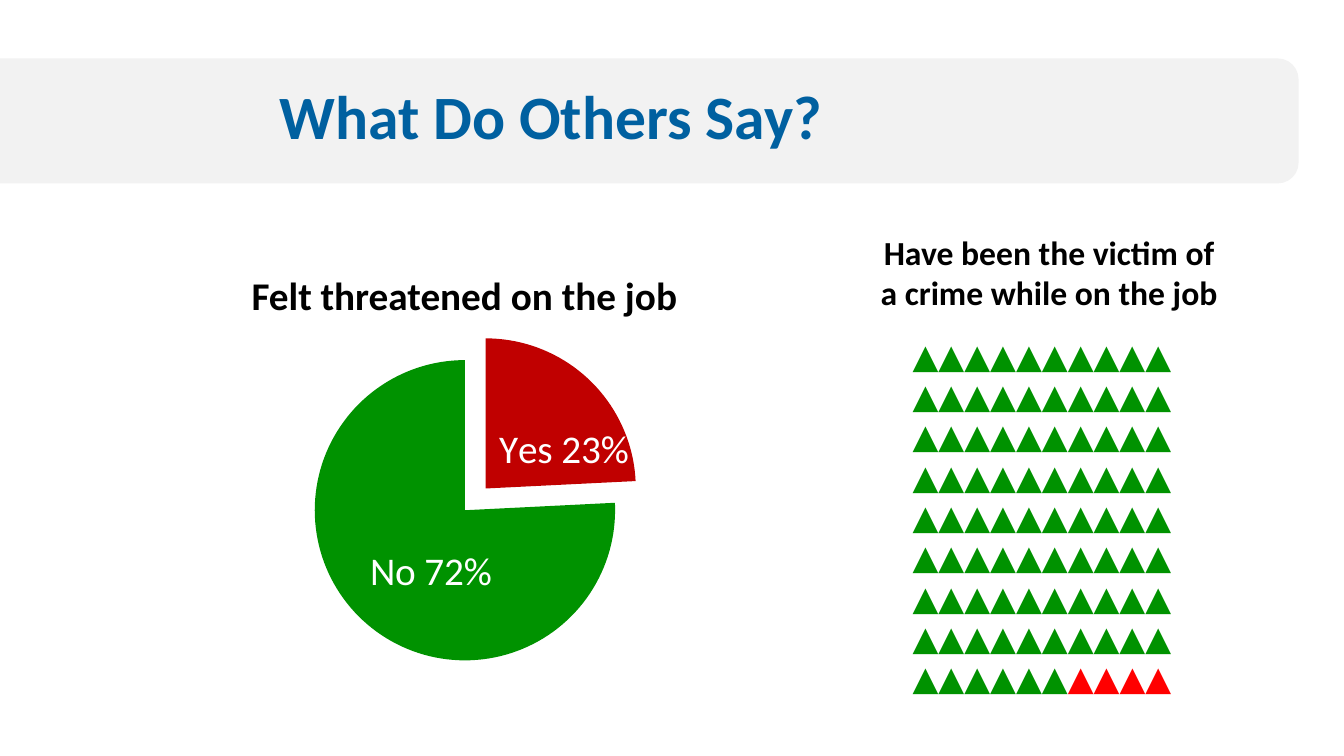
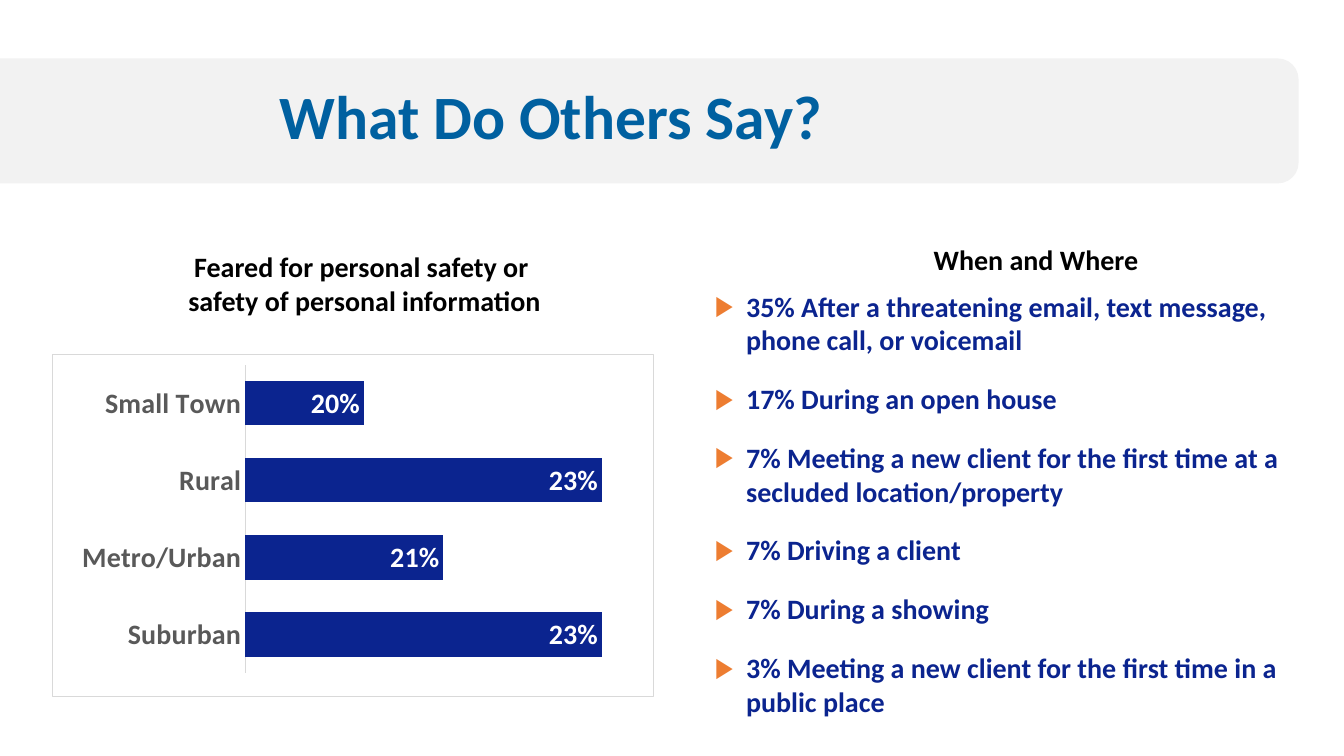
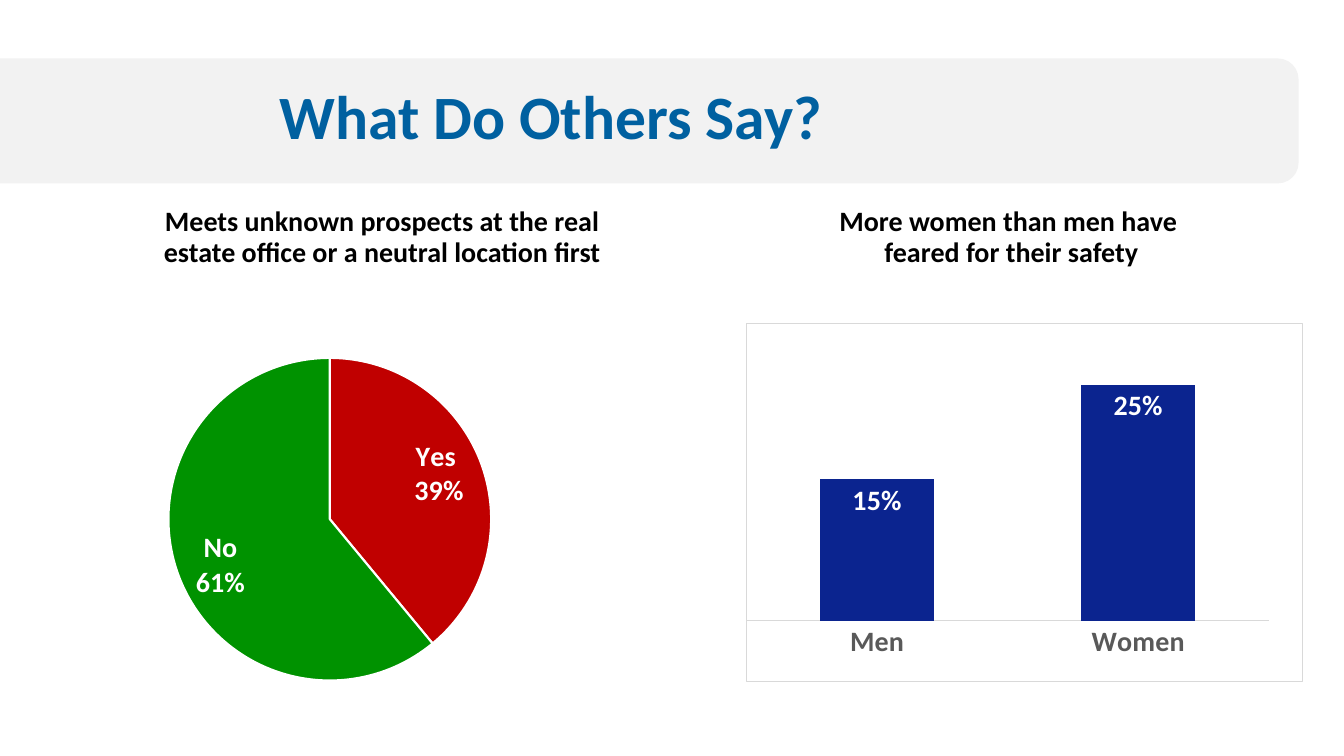
from dataclasses import dataclass

from lxml import etree
from pptx import Presentation
from pptx import util as u
from pptx.chart import data as chart_data
from pptx.dml import color
from pptx.enum import chart as charts
from pptx.enum import shapes, text
from pptx.oxml import parse_xml
from pptx.oxml import ns


@dataclass(frozen=True)
class Theme:
    face: str = "Calibri"
    title: str = "0060A0"
    band: str = "F2F2F2"
    black: str = "000000"
    white: str = "FFFFFF"
    navy: str = "0B248F"
    orange: str = "ED7D31"
    green: str = "009200"
    dark_red: str = "C00000"
    red: str = "FF0000"
    axis_text: str = "595959"
    rule: str = "D9D9D9"
    title_size: int = 44
    large: int = 28
    medium: int = 24
    small: int = 20
    chart_size: int = 10


THEME = Theme()
TITLE = "What Do Others Say?"
TITLE_BOX = (2.67, 0.58, 10.21, 1.22)
BAND_BOX = (-0.32, 0.58, 13.2, 1.24)
WHEN_AND_WHERE = [
    "35% After a threatening email, text message, phone call, or voicemail",
    "17% During an open house",
    "7% Meeting a new client for the first time at a secluded location/property",
    "7% Driving a client",
    "7% During a showing",
    "3% Meeting a new client for the first time in a public place",
]


def rgb(value):
    return color.RGBColor.from_string(value)


def inches(box):
    return [u.Inches(length) for length in box]


def place(shape, box):
    shape.left, shape.top, shape.width, shape.height = inches(box)


def set_font(font, size, ink, bold=True):
    font.name = THEME.face
    font.size = u.Pt(size)
    font.bold = bold
    font.color.rgb = rgb(ink)


def set_bullet(para, indent=0, sign=None, ink=None):
    """Indent a paragraph, with a hanging bullet if a sign is given."""
    props = para._p.get_or_add_pPr()
    props.set("marL", str(u.Inches(indent)))
    props.set("indent", str(-u.Inches(indent) if sign else 0))
    if sign:
        fill = etree.SubElement(props, ns.qn("a:buClr"))
        etree.SubElement(fill, ns.qn("a:srgbClr"), val=ink)
        etree.SubElement(props, ns.qn("a:buFont"), typeface="Arial")
        etree.SubElement(props, ns.qn("a:buChar"), char=sign)
    else:
        etree.SubElement(props, ns.qn("a:buNone"))


def add_band(deck, page):
    """Draw the title band and move it to the back of the slide master."""
    band = page.shapes.add_shape(shapes.MSO_SHAPE.ROUNDED_RECTANGLE, *inches(BAND_BOX))
    band.shadow.inherit = False
    band.fill.solid()
    band.fill.fore_color.rgb = rgb(THEME.band)
    band.line.fill.background()
    deck.slide_master.shapes.element.insert(2, band.element)


def add_page(deck, layout):
    page = deck.slides.add_slide(deck.slide_layouts.get_by_name(layout))
    title = page.shapes.title
    place(title, TITLE_BOX)
    frame = title.text_frame
    frame.auto_size = text.MSO_AUTO_SIZE.NONE
    frame.vertical_anchor = text.MSO_ANCHOR.MIDDLE
    para = frame.paragraphs[0]
    para.text = TITLE
    para.alignment = text.PP_ALIGN.LEFT
    para.line_spacing = 0.9
    set_font(para.font, THEME.title_size, THEME.title)
    return page


def add_text_frame(page, box):
    frame = page.shapes.add_textbox(*inches(box)).text_frame
    frame.word_wrap = True
    return frame


def fill_heading(para, words, size):
    para.text = words
    para.alignment = text.PP_ALIGN.CENTER
    set_font(para.font, size, THEME.black)


def add_heading(page, box, words, size):
    fill_heading(add_text_frame(page, box).paragraphs[0], words, size)


def fill_body_heading(body, box, words):
    place(body, box)
    body.text_frame.auto_size = text.MSO_AUTO_SIZE.NONE
    para = body.text_frame.paragraphs[0]
    set_bullet(para)
    para.line_spacing = 0.9
    para.space_before = u.Pt(10)
    fill_heading(para, words, THEME.small)


def fill_list(body, box, items):
    place(body, box)
    frame = body.text_frame
    frame.auto_size = text.MSO_AUTO_SIZE.NONE
    for index, item in enumerate(items):
        para = frame.add_paragraph() if index else frame.paragraphs[0]
        para.text = item
        set_bullet(para, 0.31, "▶", THEME.orange)
        para.space_before = u.Pt(6)
        para.space_after = u.Pt(12)
        set_font(para.font, THEME.small, THEME.navy)


def add_pictogram(page, box, rows, columns, marked):
    """Fill a grid with triangles, the last few of them marked red."""
    frame = add_text_frame(page, box)
    for row in range(rows):
        para = frame.paragraphs[0] if row == 0 else frame.add_paragraph()
        set_bullet(para, 1)
        para.alignment = text.PP_ALIGN.CENTER
        set_font(para.font, THEME.medium, THEME.green)
        red = marked if row == rows - 1 else 0
        para.add_run().text = "▲" * (columns - red)
        if red:
            span = para.add_run()
            span.text = "▲" * red
            span.font.color.rgb = rgb(THEME.red)


def manual_layout(values):
    """Build a chart layout from a dict such as {"x": 0.1, "y": 0.2}."""
    parts = "".join(f'<c:{key} val="{value}"/>' for key, value in values.items())
    return parse_xml(
        f'<c:layout {ns.nsdecls("c")}>'
        f"<c:manualLayout>{parts}</c:manualLayout></c:layout>"
    )


def set_plot_box(chart, plot_box):
    area = chart.element.find(".//" + ns.qn("c:plotArea"))
    for old in area.findall(ns.qn("c:layout")):
        area.remove(old)
    values = {"layoutTarget": "inner", "xMode": "edge", "yMode": "edge"}
    values.update(zip("xywh", plot_box))
    area.insert(0, manual_layout(values))


def add_chart(page, box, kind, values, plot_box):
    data = chart_data.CategoryChartData(number_format="0%")
    data.categories = list(values)
    data.add_series("Series 1", list(values.values()))
    chart = page.shapes.add_chart(kind, *inches(box), data).chart
    chart.has_legend = False
    chart.has_title = False
    set_font(chart.font, THEME.chart_size, THEME.black, bold=False)
    set_plot_box(chart, plot_box)
    return chart


def add_frame_line(chart):
    chart.element.find(ns.qn("c:chart")).addnext(parse_xml(
        f'<c:spPr {ns.nsdecls("c", "a")}><a:noFill/><a:ln w="{u.Pt(0.75)}">'
        f'<a:solidFill><a:srgbClr val="{THEME.rule}"/></a:solidFill></a:ln></c:spPr>'
    ))


def format_labels(labels, size, bold=True):
    labels.show_value = True
    labels.number_format = "0%"
    labels.number_format_is_linked = False
    set_font(labels.font, size, THEME.white, bold)


def add_bar_chart(page, box, kind, values, plot_box, scale, gap, overlap):
    chart = add_chart(page, box, kind, values, plot_box)
    add_frame_line(chart)
    plot = chart.plots[0]
    plot.vary_by_categories = False
    plot.gap_width = gap
    plot.overlap = overlap
    bars = plot.series[0].format.fill
    bars.solid()
    bars.fore_color.rgb = rgb(THEME.navy)

    plot.has_data_labels = True
    format_labels(plot.data_labels, THEME.small)
    plot.data_labels.position = charts.XL_LABEL_POSITION.INSIDE_END

    names = chart.category_axis
    names.major_tick_mark = charts.XL_TICK_MARK.NONE
    names.format.line.color.rgb = rgb(THEME.rule)
    names.format.line.width = u.Pt(0.75)
    set_font(names.tick_labels.font, THEME.small, THEME.axis_text)

    amounts = chart.value_axis
    amounts.minimum_scale, amounts.maximum_scale = scale
    amounts.visible = False
    amounts.has_major_gridlines = True
    amounts.major_gridlines.format.line.color.rgb = rgb(THEME.white)
    amounts.major_gridlines.format.line.width = u.Pt(0.75)


def adjust_label(label, shift, wrap):
    """Shift a pie label from its slice's centre; keep it on one line if asked."""
    label.find(ns.qn("c:idx")).addnext(manual_layout(dict(zip("xy", shift))))
    if not wrap:
        label.find(ns.qn("c:dLblPos")).addprevious(parse_xml(
            f'<c:txPr {ns.nsdecls("c", "a")}><a:bodyPr wrap="none"/>'
            "<a:p><a:pPr><a:defRPr/></a:pPr></a:p></c:txPr>"
        ))


def add_pie(page, box, values, plot_box, labels, size, bold, explosion=0):
    """Draw a yes/no pie; labels holds (words, shift, wrap) for each slice."""
    chart = add_chart(page, box, charts.XL_CHART_TYPE.PIE, values, plot_box)
    chart.plots[0].vary_by_categories = True
    series = chart.plots[0].series[0]
    format_labels(series.data_labels, size, bold)
    for index, (ink, (words, _, wrap)) in enumerate(
            zip((THEME.dark_red, THEME.green), labels)):
        point = series.points[index]
        point.format.fill.solid()
        point.format.fill.fore_color.rgb = rgb(ink)
        if explosion:
            point.format.line.fill.background()
        else:
            point.format.line.color.rgb = rgb(THEME.white)
            point.format.line.width = u.Pt(1.5)
        label = point.data_label
        label.text_frame.text = words
        label.text_frame.word_wrap = wrap
        for para in label.text_frame.paragraphs:
            for span in para.runs:
                set_font(span.font, size, THEME.white, bold)
        label.position = charts.XL_LABEL_POSITION.CENTER
    for label, (_, shift, wrap) in zip(chart.element.iter(ns.qn("c:dLbl")), labels):
        adjust_label(label, shift, wrap)
    for flag in chart.element.iter(ns.qn("c:showCatName")):
        flag.set("val", "1")
    if explosion:
        first_point = next(chart.element.iter(ns.qn("c:dPt")))
        first_point.addprevious(parse_xml(
            f'<c:explosion {ns.nsdecls("c")} val="{explosion}"/>'))


def build_threat_page(deck):
    page = add_page(deck, "Title Only")
    add_band(deck, page)
    add_heading(page, (1.77, 2.64, 5.67, 0.57), "Felt threatened on the job", THEME.large)
    add_pictogram(page, (7.2, 3.27, 5.27, 3.74), rows=9, columns=10, marked=4)
    add_heading(page, (8.58, 2.25, 3.65, 0.91),
                "Have been the victim of a crime while on the job", THEME.medium)
    add_pie(page, (2.42, 2.95, 4.37, 4.05), {"Yes": 0.23, "No": 0.72},
            (0.15, 0.09, 0.75, 0.81),
            [("Yes 23%", (0.06, 0.04), False), ("No 72%", (0.04, 0.02), True)],
            THEME.large, bold=False, explosion=10)


def build_fear_page(deck):
    page = add_page(deck, "Title and Content")
    add_heading(page, (0.74, 2.43, 5.75, 0.77),
                "Feared for personal safety or \vsafety of personal information", THEME.small)
    add_heading(page, (8.95, 2.36, 2.65, 0.44), "When and Where", THEME.small)
    add_bar_chart(page, (0.52, 3.51, 5.97, 3.41), charts.XL_CHART_TYPE.BAR_CLUSTERED,
                  {"Suburban": 0.23, "Metro/Urban": 0.21, "Rural": 0.23, "Small Town": 0.2},
                  (0.32, 0.03, 0.66, 0.9), scale=(0.185, 0.235), gap=73, overlap=40)
    fill_list(page.placeholders[1], (6.99, 2.82, 6.19, 4.39), WHEN_AND_WHERE)


def build_safety_page(deck):
    page = add_page(deck, "Two Content")
    headings = ["Meets unknown prospects at the real estate office or a neutral location first",
                "More women than men have\v feared for their safety"]
    for index, (left, words) in enumerate(zip((1.3, 7.51), headings), start=1):
        fill_body_heading(page.placeholders[index], (left, 2.01, 4.98, 4.76), words)
    add_pie(page, (0.76, 3.22, 5.52, 3.68), {"Yes": 0.39, "No": 0.61},
            (0.16, 0.09, 0.59, 0.87),
            [("Yes \n39%", (0.06, -0.05), True), ("No\n61%", (-0.06, 0.05), True)],
            THEME.small, bold=True)
    add_bar_chart(page, (7.4, 3.2, 5.52, 3.57), charts.XL_CHART_TYPE.COLUMN_CLUSTERED,
                  {"Men": 0.15, "Women": 0.25}, (0, 0.04, 0.94, 0.79),
                  scale=(0, 0.3), gap=129, overlap=-27)


def main():
    deck = Presentation()
    deck.slide_width = u.Inches(13.33)
    deck.slide_height = u.Inches(7.5)
    build_threat_page(deck)
    build_fear_page(deck)
    build_safety_page(deck)
    deck.save("out.pptx")


if __name__ == "__main__":
    main()
